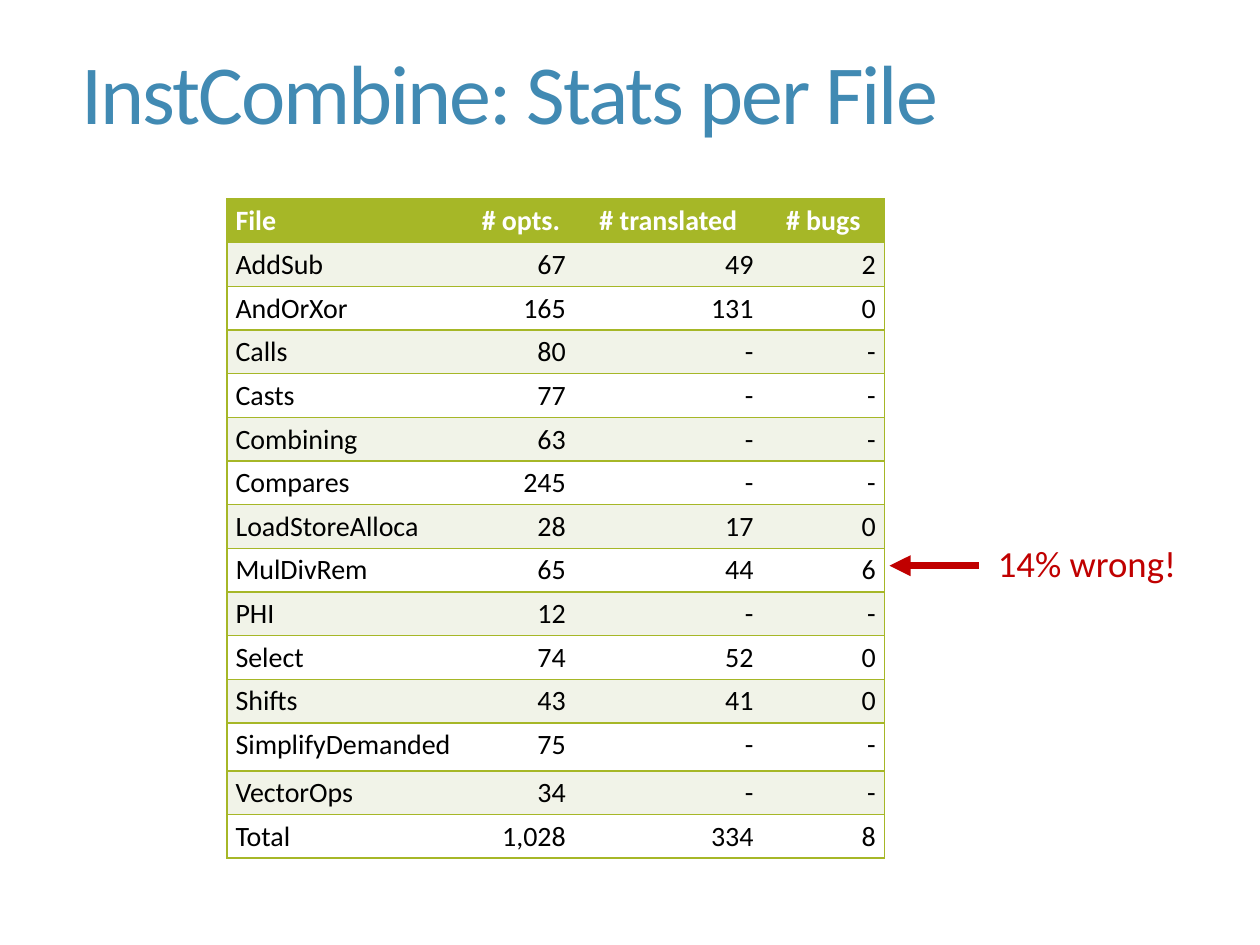
from dataclasses import dataclass

from pptx import Presentation
from pptx.dml.color import RGBColor
from pptx.enum.shapes import MSO_CONNECTOR
from pptx.enum.text import MSO_ANCHOR, MSO_AUTO_SIZE, PP_ALIGN
from pptx.oxml.ns import qn
from pptx.util import Inches, Pt
from lxml.etree import SubElement


@dataclass(frozen=True)
class Theme:
    font: str = "Calibri"
    title: str = "418AB3"
    accent: str = "A6B727"
    band: str = "F1F3E8"
    paper: str = "FFFFFF"
    ink: str = "000000"
    alert: str = "C00000"
    title_size: float = 48
    note_size: float = 21
    table_size: float = 16


HEADER = ("File", "# opts.", "# translated", "# bugs")
STATS = (
    ("AddSub", "67", "49", "2"),
    ("AndOrXor", "165", "131", "0"),
    ("Calls", "80", "-", "-"),
    ("Casts", "77", "-", "-"),
    ("Combining", "63", "-", "-"),
    ("Compares", "245", "-", "-"),
    ("LoadStoreAlloca", "28", "17", "0"),
    ("MulDivRem", "65", "44", "6"),
    ("PHI", "12", "-", "-"),
    ("Select", "74", "52", "0"),
    ("Shifts", "43", "41", "0"),
    ("SimplifyDemanded", "75", "-", "-"),
    ("VectorOps", "34", "-", "-"),
    ("Total", "1,028", "334", "8"),
)
COLUMN_WIDTHS = (19.1, 8.5, 14.9, 9.7)
ROW_HEIGHT = 3.4
TALL_ROWS = {"SimplifyDemanded": 3.8}


class SlideBuilder:
    """Draws on a grid of 100 columns by 75 rows."""

    def __init__(self, deck, theme):
        self.theme = theme
        self.slide = deck.slides.add_slide(deck.slide_layouts[6])
        self.column = deck.slide_width / 100
        self.row = deck.slide_height / 75

    def x(self, columns):
        return round(columns * self.column)

    def y(self, rows):
        return round(rows * self.row)

    def box(self, left, top, width, height):
        return self.x(left), self.y(top), self.x(width), self.y(height)

    def style(self, paragraph, size, color, bold=False):
        for run in paragraph.runs:
            run.font.name = self.theme.font
            run.font.size = Pt(size)
            run.font.bold = bold
            run.font.color.rgb = RGBColor.from_string(color)

    def text(self, wording, area, size, color):
        label = self.slide.shapes.add_textbox(*self.box(*area))
        frame = label.text_frame
        frame.word_wrap = True
        frame.text = wording
        paragraph = frame.paragraphs[0]
        paragraph.line_spacing = 0.9
        self.style(paragraph, size, color)
        return label

    def title(self, wording, area):
        heading = self.text(wording, area, self.theme.title_size, self.theme.title)
        frame = heading.text_frame
        frame.vertical_anchor = MSO_ANCHOR.MIDDLE
        frame.paragraphs[0].runs[0].font._element.set("spc", "-120")

    def note(self, wording, area):
        remark = self.text(wording, area, self.theme.note_size, self.theme.alert)
        frame = remark.text_frame
        frame.margin_left = frame.margin_right = Inches(0.15)
        frame.margin_top = frame.margin_bottom = Inches(0.12)
        frame.auto_size = MSO_AUTO_SIZE.SHAPE_TO_FIT_TEXT
        frame.paragraphs[0].space_after = Pt(4.5)
        return remark

    def arrow_from(self, source, column, row):
        """Points from the middle of the source's left side to a grid place."""
        end = self.x(column), self.y(row)
        arrow = self.slide.shapes.add_connector(MSO_CONNECTOR.STRAIGHT, *end, *end)
        arrow.begin_connect(source, 1)
        arrow.line.width = Pt(4)
        arrow.line.color.rgb = RGBColor.from_string(self.theme.alert)
        SubElement(arrow.line._get_or_add_ln(), qn("a:tailEnd"), type="triangle")
        SubElement(arrow._element.spPr, qn("a:effectLst"))

    def borders(self, cell, visible):
        """Rules the named sides (L, R, T, B) and clears the others."""
        properties = cell._tc.get_or_add_tcPr()
        for side in "LRTB":
            edge = SubElement(properties, qn(f"a:ln{side}"), w=str(Pt(1)))
            if side in visible:
                paint = SubElement(edge, qn("a:solidFill"))
                SubElement(paint, qn("a:srgbClr"), val=self.theme.accent)
            else:
                SubElement(edge, qn("a:noFill"))

    def cell(self, cell, wording, sides, fill, color, align, bold):
        cell.margin_left = cell.margin_right = Inches(0.07)
        cell.margin_top = cell.margin_bottom = Inches(0.04)
        self.borders(cell, sides)
        cell.fill.solid()
        cell.fill.fore_color.rgb = RGBColor.from_string(fill)
        cell.text_frame.text = wording
        paragraph = cell.text_frame.paragraphs[0]
        paragraph.alignment = align
        self.style(paragraph, self.theme.table_size, color, bold)

    def table(self, header, body, left, top, widths, heights):
        theme = self.theme
        rows = (header, *body)
        area = self.box(left, top, sum(widths), sum(heights))
        table = self.slide.shapes.add_table(len(rows), len(header), *area).table
        table.horz_banding = False
        for column, width in zip(table.columns, widths):
            column.width = self.x(width)
        for r, (row, height) in enumerate(zip(rows, heights)):
            table.rows[r].height = self.y(height)
            is_header = r == 0
            band = theme.band if r % 2 else theme.paper
            for c, wording in enumerate(row):
                sides = "TB" + "L" * (c == 0) + "R" * (c == len(row) - 1)
                number_align = PP_ALIGN.CENTER if is_header else PP_ALIGN.RIGHT
                self.cell(
                    table.cell(r, c), wording, sides,
                    fill=theme.accent if is_header else band,
                    color=theme.paper if is_header else theme.ink,
                    align=number_align if c else PP_ALIGN.LEFT,
                    bold=is_header,
                )


def main():
    deck = Presentation()
    deck.slide_width, deck.slide_height = Inches(10), Inches(7.5)
    builder = SlideBuilder(deck, Theme())
    builder.title("InstCombine: Stats per File", (5.5, 2.8, 88.4, 9.9))
    remark = builder.note("14% wrong!", (77.7, 42.1, 19.3, 5.6))
    heights = [TALL_ROWS.get(row[0], ROW_HEIGHT) for row in (HEADER, *STATS)]
    builder.table(HEADER, STATS, 18, 15.8, COLUMN_WIDTHS, heights)
    builder.arrow_from(remark, 70.6, 44.9)
    deck.save("out.pptx")


if __name__ == "__main__":
    main()
